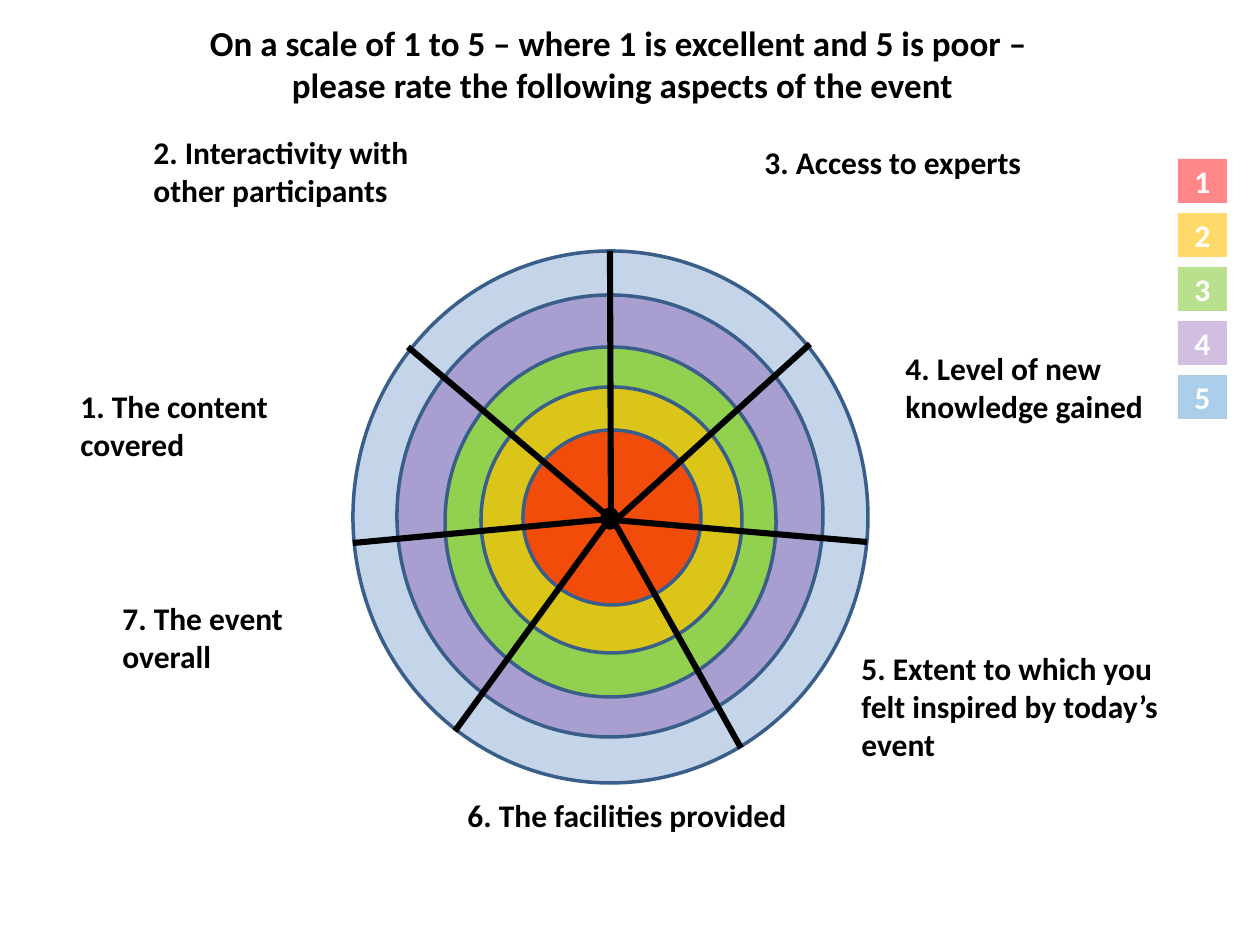
from dataclasses import dataclass

import pptx
import pptx.util
from lxml import etree
from pptx.dml.color import RGBColor
from pptx.enum.shapes import MSO_CONNECTOR, MSO_SHAPE
from pptx.enum.text import MSO_ANCHOR, MSO_AUTO_SIZE, PP_ALIGN
from pptx.oxml.ns import qn

EMU_PER_PX = 914400 / 126


@dataclass(frozen=True)
class Theme:
    font: str = "Calibri"
    title_size: int = 20
    label_size: int = 18
    ring_line_width: float = 2
    spoke_width: float = 3.5
    black: str = "000000"
    white: str = "FFFFFF"
    outline: str = "395E89"
    blue: str = "4F81BD"
    deep_blue: str = "0070C0"
    purple: str = "7030A0"
    green: str = "92D050"
    amber: str = "FFC000"
    red: str = "FF0000"


THEME = Theme()

TITLE = ("On a scale of 1 to 5 – where 1 is excellent and 5 is poor – \n"
         "please rate the following aspects of the event")

# Box, colour and opacity in percent, from the outer ring inwards
RINGS = [
    ((353, 251, 515, 532), THEME.blue, 33),
    ((397, 295, 426, 442), THEME.purple, 33),
    ((445, 347, 331, 350), THEME.green, 100),
    ((481, 387, 261, 266), THEME.amber, 68),
    ((523, 430, 178, 175), THEME.red, 61),
]
HUB = (602, 509, 16, 19)

# Rim point and inner point, clockwise from the top
SPOKES = [
    ((610, 251), (611, 515)),
    ((810, 344), (617, 519)),
    ((867, 542), (602, 519)),
    ((741, 748), (616, 525)),
    ((455, 731), (605, 525)),
    ((353, 543), (609, 519)),
    ((408, 347), (610, 518)),
]

ASPECTS = [
    ("1. The content covered", (68, 381, 287, 89)),
    ("2. Interactivity with other participants", (141, 127, 349, 89)),
    ("3. Access to experts", (752, 137, 381, 50)),
    ("4. Level of new knowledge gained", (893, 343, 301, 89)),
    ("5. Extent to which you felt inspired by today’s event",
     (849, 643, 364, 127)),
    ("6. The facilities provided", (455, 790, 383, 50)),
    ("7. The event overall", (110, 593, 253, 89)),
]

# Colour and opacity in percent of scores 1 to 5
SCORES = [
    (THEME.red, 47),
    (THEME.amber, 58),
    (THEME.green, 65),
    (THEME.purple, 31),
    (THEME.deep_blue, 33),
]
SCORE_LEFT, SCORE_TOP, SCORE_PITCH = 1178, 159, 54
SCORE_WIDTH, SCORE_HEIGHT = 49, 44


def emu(*lengths):
    return [pptx.util.Emu(round(length * EMU_PER_PX)) for length in lengths]


def rgb(colour):
    return RGBColor.from_string(colour)


def write_text(shape, text, size, colour, alignment, anchor):
    text_frame = shape.text_frame
    text_frame.text = text
    text_frame.word_wrap = True
    text_frame.auto_size = MSO_AUTO_SIZE.NONE
    text_frame.vertical_anchor = anchor
    for paragraph in text_frame.paragraphs:
        paragraph.alignment = alignment
        for run in paragraph.runs:
            run.font.name = THEME.font
            run.font.size = pptx.util.Pt(size)
            run.font.bold = True
            run.font.color.rgb = rgb(colour)


def add_title(slide):
    title = slide.shapes.title
    title.left, title.top, title.width, title.height = emu(77, 15, 1091, 97)
    write_text(title, TITLE, THEME.title_size, THEME.black,
               PP_ALIGN.CENTER, MSO_ANCHOR.TOP)


def add_filled_shape(slide, kind, box, colour, opacity=100, outline=None):
    shape = slide.shapes.add_shape(kind, *emu(*box))
    shape.shadow.inherit = False
    shape.fill.solid()
    shape.fill.fore_color.rgb = rgb(colour)
    if opacity < 100:
        fill_path = f"{qn('a:solidFill')}/{qn('a:srgbClr')}"
        fill_colour = shape.element.spPr.find(fill_path)
        etree.SubElement(fill_colour, qn("a:alpha"), val=str(opacity * 1000))
    if outline:
        shape.line.color.rgb = rgb(outline)
        shape.line.width = pptx.util.Pt(THEME.ring_line_width)
    else:
        shape.line.fill.background()
    return shape


def add_spoke(slide, rim, inner):
    spoke = slide.shapes.add_connector(MSO_CONNECTOR.STRAIGHT,
                                       *emu(*rim, *inner))
    spoke.line.color.rgb = rgb(THEME.black)
    spoke.line.width = pptx.util.Pt(THEME.spoke_width)
    etree.SubElement(spoke.element.spPr, qn("a:effectLst"))


def add_aspect(slide, text, box):
    label = slide.shapes.add_textbox(*emu(*box))
    write_text(label, text, THEME.label_size, THEME.black,
               PP_ALIGN.LEFT, MSO_ANCHOR.TOP)


def add_score(slide, score, colour, opacity):
    top = SCORE_TOP + (score - 1) * SCORE_PITCH
    box = (SCORE_LEFT, top, SCORE_WIDTH, SCORE_HEIGHT)
    tile = add_filled_shape(slide, MSO_SHAPE.RECTANGLE, box, colour, opacity)
    write_text(tile, str(score), THEME.label_size, THEME.white,
               PP_ALIGN.CENTER, MSO_ANCHOR.MIDDLE)


def main():
    presentation = pptx.Presentation()
    presentation.slide_width, presentation.slide_height = emu(1260, 945)
    title_only = presentation.slide_layouts[5]
    slide = presentation.slides.add_slide(title_only)

    add_title(slide)
    for box, colour, opacity in RINGS:
        add_filled_shape(slide, MSO_SHAPE.OVAL, box, colour, opacity,
                         THEME.outline)
    for text, box in ASPECTS:
        add_aspect(slide, text, box)
    for score, (colour, opacity) in enumerate(SCORES, start=1):
        add_score(slide, score, colour, opacity)
    for rim, inner in SPOKES:
        add_spoke(slide, rim, inner)
    add_filled_shape(slide, MSO_SHAPE.OVAL, HUB, THEME.black,
                     outline=THEME.black)

    presentation.save("out.pptx")


if __name__ == "__main__":
    main()
